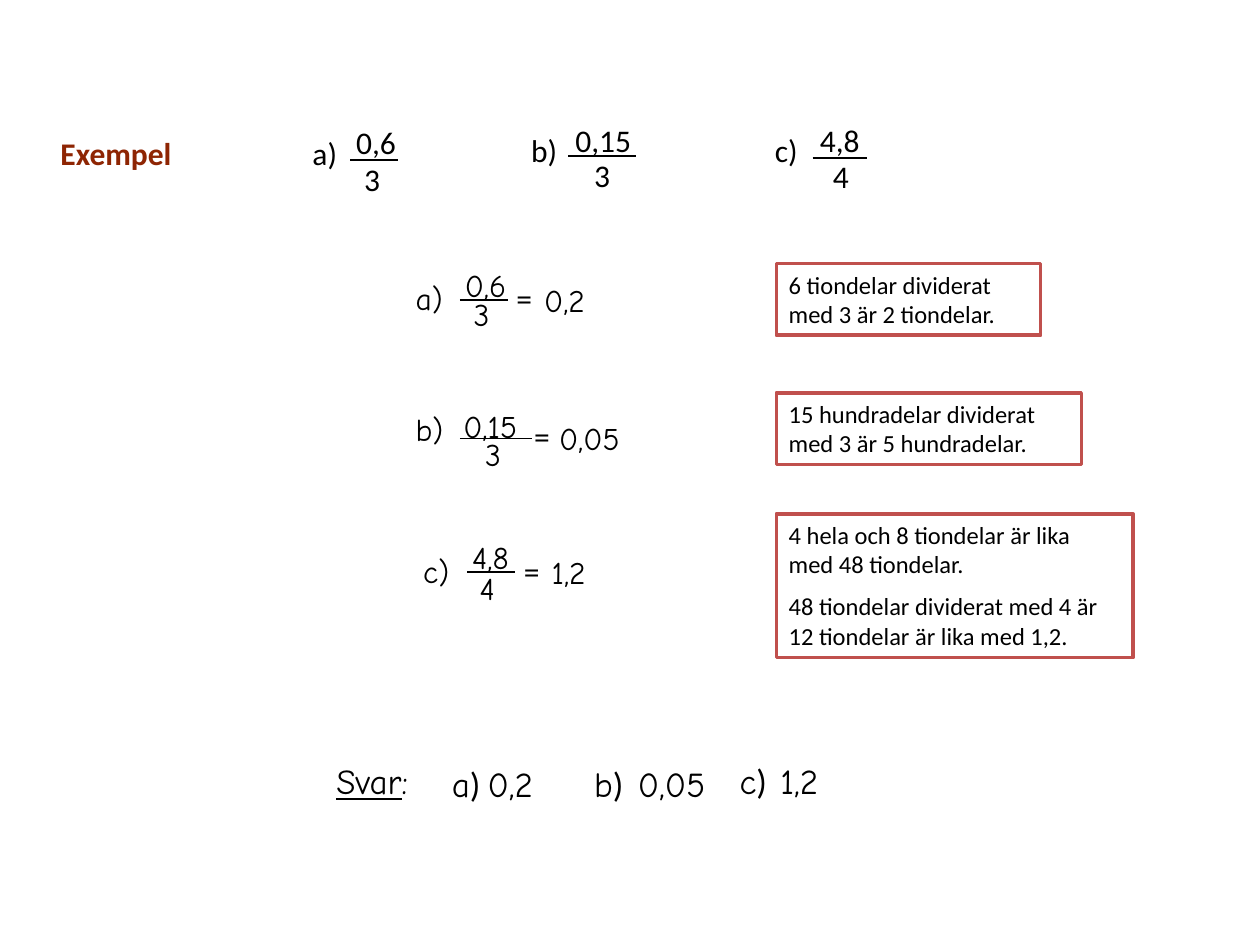
import pptx
import pptx.dml.color
import pptx.enum.shapes
import pptx.enum.text
import pptx.util
import lxml.etree
from pptx.util import Cm

BLACK = pptx.dml.color.RGBColor(0x00, 0x00, 0x00)
WHITE = pptx.dml.color.RGBColor(0xFF, 0xFF, 0xFF)
BROWN = pptx.dml.color.RGBColor(0x8E, 0x25, 0x03)
RED = pptx.dml.color.RGBColor(0xC0, 0x50, 0x4D)
PRINT = "Calibri"
HAND = "Comic Neue"


def add_run(paragraph, text, font=PRINT, size=18, color=BLACK, bold=False, underline=False):
    run = paragraph.add_run()
    run.text = text
    run.font.name = font
    run.font.size = pptx.util.Pt(size)
    run.font.color.rgb = color
    run.font.bold = bold
    run.font.underline = underline


def add_text_box(left, top, width, height=1.02):
    """Add an empty text box, measured in cm, and return its first paragraph."""
    shape = slide.shapes.add_textbox(Cm(left), Cm(top), Cm(width), Cm(height))
    shape.text_frame.word_wrap = False
    shape.text_frame.auto_size = pptx.enum.text.MSO_AUTO_SIZE.SHAPE_TO_FIT_TEXT
    return shape.text_frame.paragraphs[0]


presentation = pptx.Presentation()
presentation.slide_width = Cm(25.4)
presentation.slide_height = Cm(19.05)
slide = presentation.slides.add_slide(presentation.slide_layouts[6])

# Heading
add_run(add_text_box(0.97, 2.57, 2.74), "Exempel", color=BROWN, bold=True)

# Fractions: font, then (text, left, top, width) parts, then bar (start, end, height)
fractions = [
    (PRINT, [("a)", 6.05, 2.57, 1.12), ("0,6", 6.93, 2.36, 1.32), ("3", 7.09, 3.1, 0.84)],
     (7.06, 8.03, 3.23)),
    (PRINT, [("b)", 10.46, 2.51, 1.12), ("0,15", 11.35, 2.31, 2.01), ("3", 11.73, 3.02, 0.84)],
     (11.46, 12.83, 3.15)),
    (PRINT, [("c)", 15.37, 2.51, 1.12), ("4,8", 16.28, 2.31, 2.01), ("4", 16.54, 3.05, 0.84)],
     (16.38, 17.48, 3.18)),
    (HAND, [("a)", 8.13, 5.51, 1.27), ("0,6", 9.12, 5.23, 1.45), ("3", 9.3, 5.82, 0.91),
            ("=", 10.16, 5.51, 0.84), ("0,2", 10.72, 5.54, 1.65)],
     (9.27, 10.24, 6.05)),
    (HAND, [("b)", 8.13, 8.15, 1.27), ("0,15", 9.09, 8.08, 1.83), ("3", 9.53, 8.64, 0.91),
            ("=", 10.52, 8.28, 0.84), ("0,05", 11.02, 8.33, 1.85)],
     (9.27, 10.72, 8.84)),
    (HAND, [("c)", 8.28, 11, 1.27), ("4,8", 9.27, 10.72, 1.45), ("4", 9.42, 11.35, 0.91),
            ("=", 10.31, 11, 0.84), ("1,2", 10.87, 11.02, 1.65)],
     (9.42, 10.39, 11.53)),
]
for font, parts, (start, end, height) in fractions:
    for text, left, top, width in parts:
        add_run(add_text_box(left, top, width), text, font=PRINT if text == "=" else font)
    bar = slide.shapes.add_connector(
        pptx.enum.shapes.MSO_CONNECTOR.STRAIGHT, Cm(start), Cm(height), Cm(end), Cm(height))
    bar.line.color.rgb = BLACK
    bar.line.width = pptx.util.Pt(1)
    lxml.etree.SubElement(bar.line._get_or_add_ln().getparent(),
                          pptx.oxml.ns.qn("a:effectLst"))

# Framed explanations
explanations = [
    (5.31, 5.33, 1.45, ["6 tiondelar dividerat med 3 är 2 tiondelar."]),
    (7.92, 6.15, 1.45, ["15 hundradelar dividerat med 3 är 5 hundradelar."]),
    (10.36, 7.19, 2.9, ["4 hela och 8 tiondelar är lika med 48 tiondelar.",
                        "48 tiondelar dividerat med 4 är 12 tiondelar är lika med 1,2."]),
]
for top, width, height, sentences in explanations:
    shape = slide.shapes.add_shape(
        pptx.enum.shapes.MSO_SHAPE.RECTANGLE, Cm(15.65), Cm(top), Cm(width), Cm(height))
    shape.shadow.inherit = False
    shape.fill.solid()
    shape.fill.fore_color.rgb = WHITE
    shape.line.color.rgb = RED
    shape.line.width = pptx.util.Pt(2)
    frame = shape.text_frame
    frame.word_wrap = True
    frame.vertical_anchor = pptx.enum.text.MSO_ANCHOR.TOP
    for index, sentence in enumerate(sentences):
        paragraph = frame.add_paragraph() if index else frame.paragraphs[0]
        paragraph.alignment = pptx.enum.text.PP_ALIGN.LEFT
        paragraph.space_before = pptx.util.Pt(7 * index)
        add_run(paragraph, sentence, size=14)

# Answers, each value set at a hanging indent
paragraph = add_text_box(6.53, 15.19, 2.64, 1.12)
add_run(paragraph, "Svar", font=HAND, size=20, underline=True)
add_run(paragraph, ":", font=HAND, size=20)
for letter, value, left, top, indent in [
    ("a", "0,2", 8.86, 15.24, 0.72),
    ("b", "0,05", 11.73, 15.24, 0.88),
    ("c", "1,2", 14.66, 15.19, 0.82),
]:
    paragraph = add_text_box(left, top, 3.94, 1.12)
    paragraph.alignment = pptx.enum.text.PP_ALIGN.LEFT
    properties = paragraph._p.get_or_add_pPr()
    properties.set("marL", str(Cm(indent)))
    properties.set("indent", str(-Cm(indent)))
    add_run(paragraph, letter, font=HAND, size=20)
    add_run(paragraph, ")\t", size=20)
    add_run(paragraph, value, font=HAND, size=20)
    paragraph._parent.word_wrap = True

presentation.save("out.pptx")
